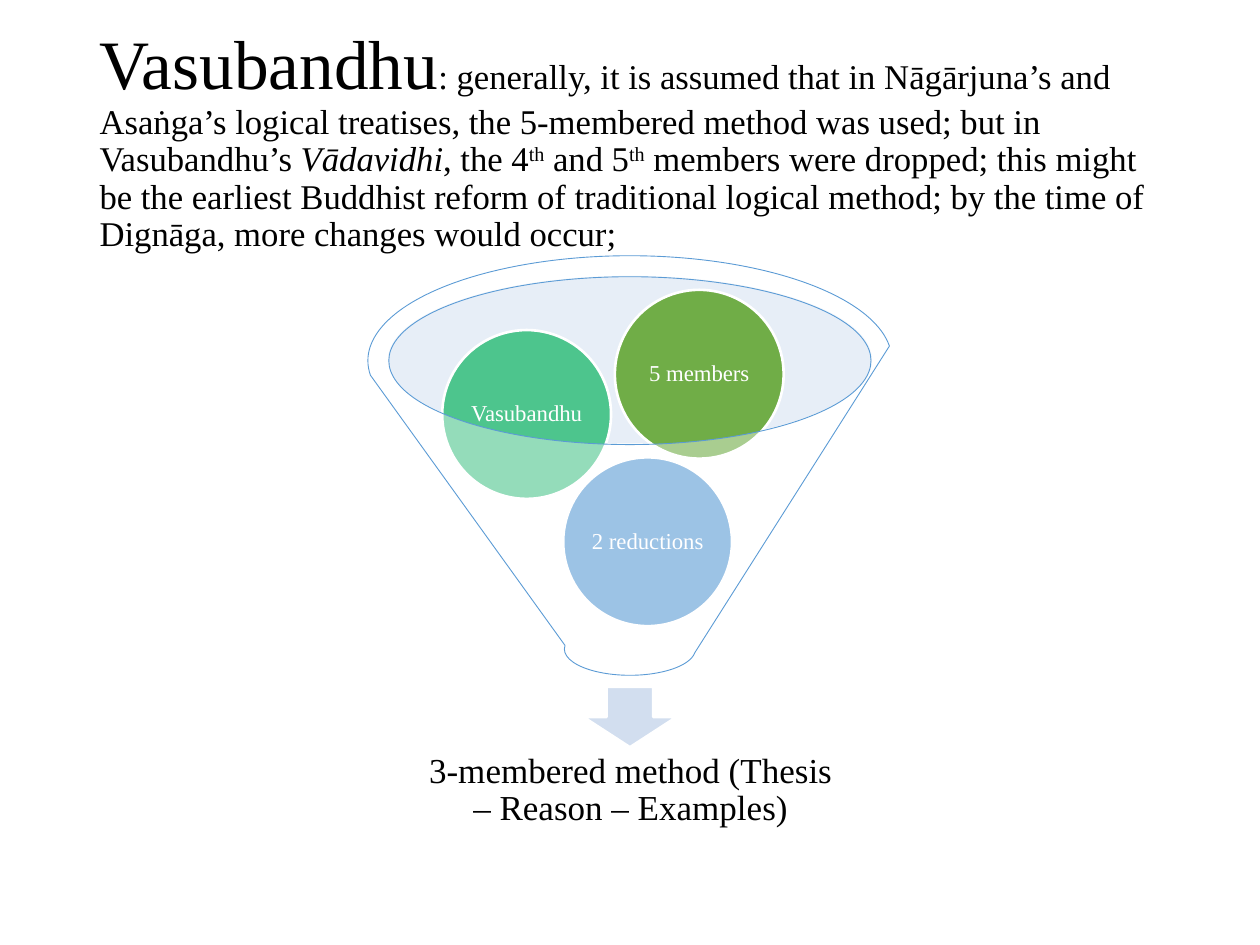
import pptx
import pptx.util
import pptx.dml.color
import pptx.enum.shapes
import pptx.enum.text
import pptx.oxml.ns
import lxml.etree

Pt = pptx.util.Pt
Kind = pptx.enum.shapes.MSO_SHAPE
Align = pptx.enum.text.PP_ALIGN
qn = pptx.oxml.ns.qn

deck = pptx.Presentation()
deck.slide_width = pptx.util.Inches(10)
deck.slide_height = pptx.util.Inches(7.5)
wide = deck.slide_width / 100
high = deck.slide_height / 100
slide = deck.slides.add_slide(deck.slide_layouts[5])


def paint(fill, hue, alpha=100):
    fill.solid()
    fill.fore_color.rgb = pptx.dml.color.RGBColor.from_string(hue)
    if alpha < 100:
        tint = fill._xPr.find(qn("a:solidFill"))[0]
        lxml.etree.SubElement(tint, qn("a:alpha")).set("val", str(alpha * 1000))


def write(shape, text, size=20, hue="000000", align=Align.CENTER, inset=None, slant=False, rise=0):
    frame = shape.text_frame
    frame.word_wrap = True
    frame.auto_size = pptx.enum.text.MSO_AUTO_SIZE.NONE
    frame.vertical_anchor = pptx.enum.text.MSO_ANCHOR.MIDDLE
    if inset is not None:
        frame.margin_left = frame.margin_right = pptx.util.Inches(inset)
        frame.margin_top = frame.margin_bottom = pptx.util.Inches(inset)
    para = frame.paragraphs[0]
    para.alignment = align
    para.line_spacing = 0.9
    run = para.add_run()
    run.text = text
    run.font.name = "Times New Roman"
    run.font.size = Pt(size)
    run.font.italic = slant
    paint(run.font.fill, hue)
    if rise:
        run._r.get_or_add_rPr().set("baseline", str(rise * 1000))


title = slide.shapes.title
title.left, title.top = int(6.9 * wide), int(5.33 * high)
title.width, title.height = int(86.2 * wide), int(19.33 * high)
for text, form in [
    ("Vasubandhu", {"size": 39.6}),
    (": generally, it is assumed that in Nāgārjuna’s and Asaṅga’s logical treatises, "
     "the 5-membered method was used; but in Vasubandhu’s ", {}),
    ("Vādavidhi", {"slant": True}),
    (", the 4", {}),
    ("th", {"rise": 30}),
    (" and 5", {}),
    ("th", {"rise": 30}),
    (" members were dropped; this might be the earliest Buddhist reform of traditional "
     "logical method; by the time of Dignāga, more changes would occur;", {}),
]:
    write(title, text, **{"size": 19.8, "align": Align.LEFT, **form})

ball = (13.4, 17.87)
for kind, x, y, (w, h), hue, alpha, edge, thick, text in [
    (Kind.OVAL, 30.8, 29.2, (38.4, 17.73), "C4D5EB", 40, None, 0, ""),
    (Kind.DOWN_ARROW, 46.3, 72.67, (7.4, 6.4), "D2DEEF", 100, "FFFFFF", 1.5, ""),
    (Kind.OVAL, 44.7, 48.4, ball, "5B9BD5", 100, "FFFFFF", 1.5, "2 reductions"),
    (Kind.OVAL, 35.1, 34.93, ball, "4DC58D", 100, "FFFFFF", 1.5, "Vasubandhu"),
    (Kind.OVAL, 48.8, 30.67, ball, "70AD47", 100, "FFFFFF", 1.5, "5 members"),
    (Kind.FUNNEL, 29.2, 27.07, (41.6, 44.4), "FFFFFF", 40, "5B9BD5", 0.5, ""),
]:
    shape = slide.shapes.add_shape(kind, int(x * wide), int(y * high), int(w * wide), int(h * high))
    shape.shadow.inherit = False
    paint(shape.fill, hue, alpha)
    if edge:
        paint(shape.line.fill, edge)
        shape.line.width = Pt(thick)
    else:
        shape.line.fill.background()
    if text:
        write(shape, text, size=13, hue="FFFFFF", inset=0.02)

label = slide.shapes.add_textbox(
    int(32.2 * wide), int(77.73 * high), int(35.7 * wide), int(11.87 * high))
write(label, "3-membered method (Thesis – Reason – Examples)", inset=0.16)

deck.save("out.pptx")
